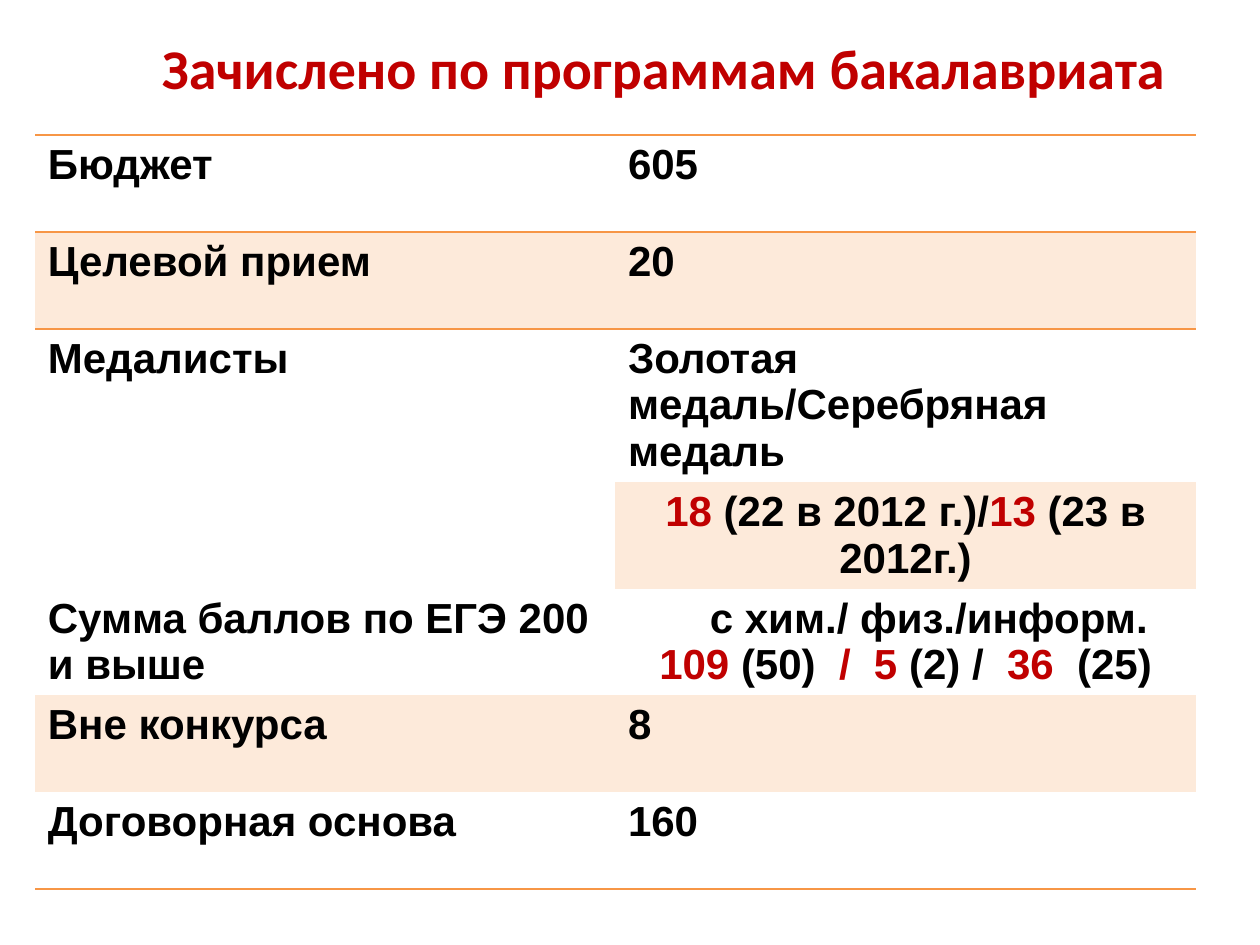
import pptx
import pptx.util
import pptx.dml.color
import pptx.enum.text
import pptx.oxml.ns
from lxml import etree

inch, pt = pptx.util.Inches, pptx.util.Pt
qn = pptx.oxml.ns.qn
mid = pptx.enum.text.PP_ALIGN.CENTER

# Content: a cell is a list of lines, a line is a list of (text, colour) runs
HUES = {"text": "000000", "red": "C00000", "rule": "F79646", "band": "FDEADA"}
TITLE = "Зачислено по программам бакалавриата"
MEDALS = [[("18 ", "red"), ("(22 в 2012 г.)/", "text"),
           ("13 ", "red"), ("(23 в 2012г.)", "text")]]
SCORES = [[("с хим./ физ./информ.", "text")],
          [("109 ", "red"), ("(50)  ", "text"), ("/  5 ", "red"),
           ("(2) /  ", "text"), ("36", "red"), ("  (25)", "text")]]
ROWS = [
    ("Бюджет", "605"),
    ("Целевой прием", "20"),
    ("Медалисты", "Золотая медаль/Серебряная медаль"),
    (None, MEDALS),
    ("Сумма баллов по ЕГЭ 200 и выше", SCORES),
    ("Вне конкурса", "8"),
    ("Договорная основа", "160"),
]
HIGH = [0.77, 0.77, 1.22, 0.84, 0.84, 0.77, 0.77]
RULES = {0: ("lnT", "lnB"), 1: ("lnT",), len(ROWS) - 1: ("lnB",)}
LEFT, TOP, WIDE = 0.28, 1.07, 9.21
NO_GRID = "{2D5ABB26-0587-4C30-8999-92F81FD0307C}"


def rgb(name):
    return pptx.dml.color.RGBColor.from_string(HUES[name])


def style(font, size, face, hue):
    for key, val in {"size": pt(size), "name": face, "bold": True}.items():
        setattr(font, key, val)
    font.color.rgb = rgb(hue)


def write(cell, lines):
    plain = isinstance(lines, str)
    if plain:
        lines = [[(lines, "text")]]
    frame = cell.text_frame
    for n, line in enumerate(lines):
        para = frame.add_paragraph() if n else frame.paragraphs[0]
        if not plain:
            para.alignment = mid
        for text, hue in line:
            run = para.add_run()
            run.text = text
            style(run.font, 24, "Arial", hue)


def rule(cell, sides):
    props = cell._tc.get_or_add_tcPr()
    for n, side in enumerate(sides):
        line = etree.Element(qn("a:" + side), w=str(pt(1)))
        fill = etree.SubElement(line, qn("a:solidFill"))
        etree.SubElement(fill, qn("a:srgbClr"), val=HUES["rule"])
        props.insert(n, line)


deck = pptx.Presentation()
deck.slide_width, deck.slide_height = inch(10), inch(7.5)
slide = deck.slides.add_slide(deck.slide_layouts[5])

# Title
title = slide.shapes.title
spot = {"left": 0.98, "top": 0.21, "width": 8.58, "height": 0.64}
for key, val in spot.items():
    setattr(title, key, inch(val))
title.text_frame.text = TITLE
head = title.text_frame.paragraphs[0]
head.alignment = mid
style(head.runs[0].font, 32, "Calibri", "red")

# Table
grid = slide.shapes.add_table(len(ROWS), 2, inch(LEFT), inch(TOP),
                              inch(WIDE), inch(sum(HIGH))).table
grid.first_row = grid.horz_banding = False
grid._tbl.tblPr.find(qn("a:tableStyleId")).text = NO_GRID
for col in grid.columns:
    col.width = inch(WIDE / 2)
for r, (row, high) in enumerate(zip(ROWS, HIGH)):
    grid.rows[r].height = inch(high)
    for c, lines in enumerate(row):
        cell = grid.cell(r, c)
        if lines is None:
            grid.cell(r - 1, c).merge(cell)
            continue
        write(cell, lines)
        if r % 2:
            cell.fill.solid()
            cell.fill.fore_color.rgb = rgb("band")
        else:
            cell.fill.background()
        rule(cell, RULES.get(r, ()))

# Indent the subject line above the scores
subject = grid.cell(4, 1).text_frame.paragraphs[0]
subject._p.get_or_add_pPr().set("marL", str(inch(0.37)))

deck.save("out.pptx")
